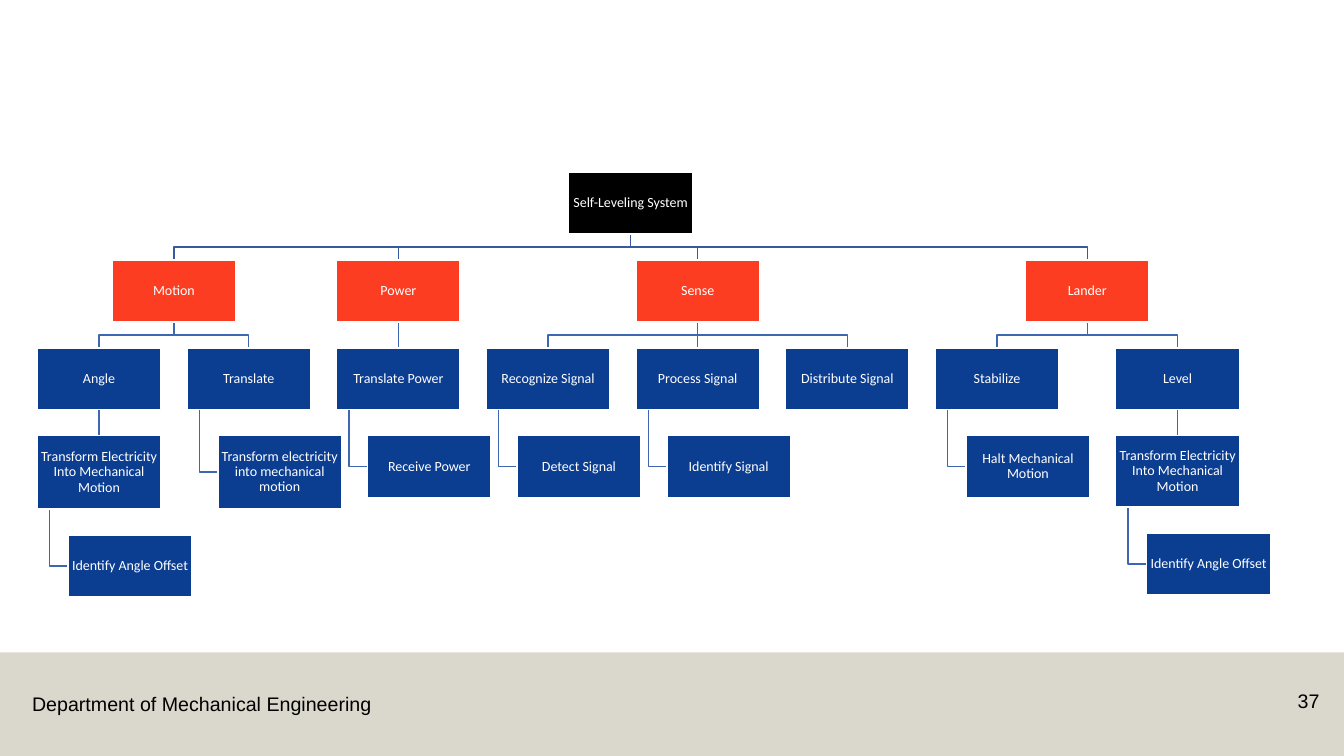
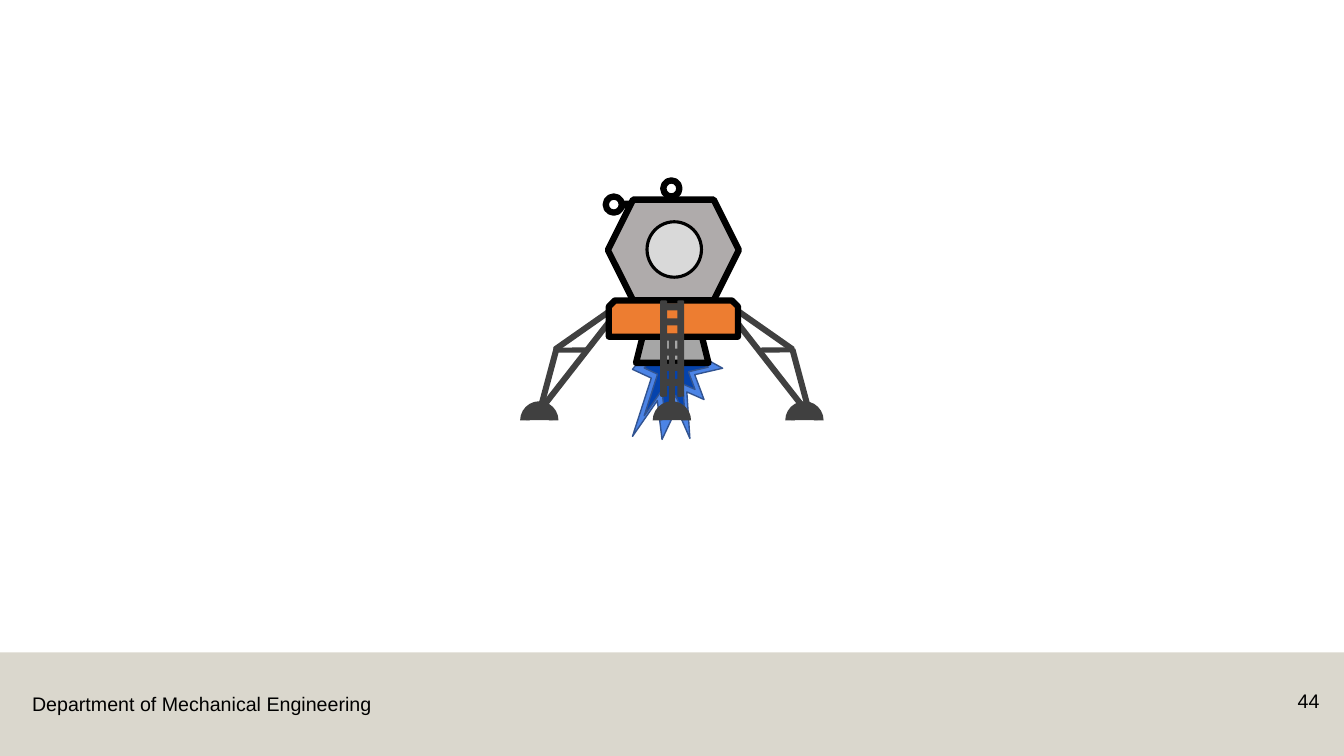
from lxml.etree import SubElement
from pptx import Presentation
from pptx.dml.color import RGBColor
from pptx.enum.shapes import MSO_CONNECTOR, MSO_SHAPE as Preset
from pptx.enum.text import MSO_ANCHOR, PP_ALIGN as Align
from pptx.oxml.ns import qn
from pptx.util import Pt

FOOTER = "Department of Mechanical Engineering"
BLACK, WHITE, RED, BLUE = "000000", "FFFFFF", "FC3D21", "0B3D91"
ROOT_LINE, BRANCH_LINE = "365B9D", "3E67B2"
DARK, ORANGE, HULL = "404040", "ED7D31", "AFABAB"

BOX_WIDTH, BOX_HEIGHT, GAP = 88.3, 44.15, 18.55
CHART_LEFT, CHART_TOP = 26.6, 123.1
COLUMN_PITCH, INDENT, STEM = 106.9, 22.1, 8.8

ROOT = "Self-Leveling System"
BELOW, HANGING = 0, INDENT
TRANSFORM = "Transform Electricity Into Mechanical Motion"
OFFSET = ("Identify Angle Offset", HANGING, BOX_HEIGHT)
BRANCHES = [
    ("Motion", [
        ("Angle", 0, [(TRANSFORM, BELOW, 52.5), OFFSET]),
        ("Translate", 1, [("Transform electricity into mechanical motion", HANGING, 52)]),
    ]),
    ("Power", [
        ("Translate Power", 2, [("Receive Power", HANGING, BOX_HEIGHT)]),
    ]),
    ("Sense", [
        ("Recognize Signal", 3, [("Detect Signal", HANGING, BOX_HEIGHT)]),
        ("Process Signal", 4, [("Identify Signal", HANGING, BOX_HEIGHT)]),
        ("Distribute Signal", 5, []),
    ]),
    ("Lander", [
        ("Stabilize", 6, [("Halt Mechanical Motion", HANGING, BOX_HEIGHT)]),
        ("Level", 7 + INDENT / COLUMN_PITCH, [(TRANSFORM, BELOW, 51), OFFSET]),
    ]),
]

FLAMES = [
    (Preset.EXPLOSION1, (415.4, 213.1, 129.6, 72), "4C84E6", "325491", 1, 270),
    (Preset.EXPLOSION1, (434.2, 226.8, 92.2, 51.1), "0543AD", "325491", 1, 270),
]
NOZZLE = [(Preset.TRAPEZOID, (454.3, 229, 51.8, 30.2), "A6A6A6", BLACK, 4.5, 0)]
FEET_LEFT, FOOT_PITCH = 371.5, 94.7
CABIN = [
    (Preset.ROUNDED_RECTANGLE, (439.2, 143.3, 16.6, 5.8), BLACK, None, 0, 0),
    (Preset.HEXAGON, (434.2, 142.6, 93.6, 72), HULL, BLACK, 4.5, 0),
]
LEG_STRUTS = [
    (370.8, 501.8, 253.4, 88.6, 4.3, 128),
    (391, 514.1, 231.1, 57.6, 4.3, 145),
    (369.4, 549.4, 268.6, 44.6, 4.3, 105),
    (395.3, 543.6, 248.2, 23.8, 3.6, 180),
]
CENTRE_STRUT = (453.6, 265, 52.6, 4.3)
BODY = [(Preset.SNIP_2_SAME_RECTANGLE, (434.9, 214.6, 92.2, 25.9), ORANGE, BLACK, 4.5, 0)]
RAILS = [471.6, 483.8]
RUNG_TOP, RUNG_PITCH, RUNG_COUNT = 216.7, 10.8, 6
FITTINGS = [
    (Preset.FLOWCHART_CONNECTOR, (462.2, 158.4, 38.9, 39.6), "D9D9D9", BLACK, 2.25, 0),
    (Preset.ROUNDED_RECTANGLE, (475.9, 136.8, 7.9, 5.8), BLACK, None, 0, 90),
    (Preset.FLOWCHART_CONNECTOR, (432.7, 140.4, 11.5, 11.5), WHITE, BLACK, 4.5, 0),
    (Preset.FLOWCHART_CONNECTOR, (473.8, 128.9, 11.5, 11.5), WHITE, BLACK, 4.5, 0),
]


def color(value):
    return RGBColor.from_string(value)


def add_part(shapes, preset, frame, fill, line=None, weight=0, angle=0):
    shape = shapes.add_shape(preset, *map(Pt, frame))
    shape.shadow.inherit = False
    shape.rotation = angle
    shape.fill.solid()
    shape.fill.fore_color.rgb = color(fill)
    if line:
        shape.line.color.rgb = color(line)
        shape.line.width = Pt(weight)
    else:
        shape.line.fill.background()
    return shape


def write(shape, text, size, font, ink, align):
    paragraph = shape.text_frame.paragraphs[0]
    paragraph.alignment = align
    run = paragraph.add_run()
    run.text = text
    run.font.size = Pt(size)
    run.font.name = font
    run.font.color.rgb = color(ink)
    return paragraph


def add_label(slide, frame, text, align, wrap):
    label = slide.shapes.add_textbox(*map(Pt, frame))
    label.text_frame.word_wrap = wrap
    write(label, text, 14, "Arial", BLACK, align)


def new_slide(presentation, number):
    slide = presentation.slides.add_slide(presentation.slide_layouts[6])
    band = add_part(slide.shapes, Preset.RECTANGLE, (0, 466, 960, 74), "B7B09C")
    band_color = band.fill._xPr.find(qn("a:solidFill"))[0]
    SubElement(band_color, qn("a:alpha")).set("val", "50000")
    add_label(slide, (15.8, 491, 258.5, 24.5), FOOTER, Align.LEFT, False)
    add_label(slide, (894.2, 488.9, 55.4, 28.8), number, Align.RIGHT, True)
    return slide


def add_link(slide, points, ink):
    points = [(Pt(x), Pt(y)) for x, y in points]
    if len(points) == 2:
        link = slide.shapes.add_connector(MSO_CONNECTOR.STRAIGHT, *points[0], *points[1])
        SubElement(link._element.spPr, qn("a:effectLst"))
    else:
        builder = slide.shapes.build_freeform(*points[0])
        builder.add_line_segments(points[1:], close=False)
        link = builder.convert_to_shape()
        link.shadow.inherit = False
        link.fill.background()
    link.line.color.rgb = color(ink)
    link.line.width = Pt(1)


def add_box(slide, text, fill, left, top, height):
    box = add_part(slide.shapes, Preset.RECTANGLE, (left, top, BOX_WIDTH, height), fill, WHITE, 1)
    frame = box.text_frame
    frame.word_wrap = True
    frame.vertical_anchor = MSO_ANCHOR.MIDDLE
    frame.margin_left = frame.margin_right = Pt(0.7)
    frame.margin_top = frame.margin_bottom = Pt(0.7)
    write(box, text, 10, "Calibri", WHITE, Align.CENTER).line_spacing = 0.9


def fork(parent_left, child_left, child_top):
    start, end = parent_left + BOX_WIDTH / 2, child_left + BOX_WIDTH / 2
    top, middle = child_top - GAP, child_top - GAP / 2
    if abs(start - end) < 1:
        return [(start, top), (start, child_top)]
    return [(start, top), (start, middle), (end, middle), (end, child_top)]


def hang(parent_left, child_top, child_height):
    stem, middle = parent_left + STEM, child_top + child_height / 2
    return [(stem, child_top - GAP), (stem, middle), (parent_left + INDENT, middle)]


def layout_tree():
    boxes, links = [], []
    branch_top = CHART_TOP + BOX_HEIGHT + GAP
    leaf_top = branch_top + BOX_HEIGHT + GAP
    branch_lefts = []
    for branch, leaves in BRANCHES:
        leaf_lefts = [CHART_LEFT + column * COLUMN_PITCH for _, column, _ in leaves]
        branch_left = (leaf_lefts[0] + leaf_lefts[-1]) / 2
        branch_lefts.append(branch_left)
        boxes.append((branch, RED, branch_left, branch_top, BOX_HEIGHT))
        for (leaf, _, chain), left in zip(leaves, leaf_lefts):
            links.append((fork(branch_left, left, leaf_top), BRANCH_LINE))
            boxes.append((leaf, BLUE, left, leaf_top, BOX_HEIGHT))
            top = leaf_top + BOX_HEIGHT + GAP
            for text, indent, height in chain:
                route = hang(left, top, height) if indent else fork(left, left, top)
                links.append((route, BRANCH_LINE))
                left += indent
                boxes.append((text, BLUE, left, top, height))
                top += height + GAP
    root_left = (branch_lefts[0] + branch_lefts[-1]) / 2
    boxes.append((ROOT, BLACK, root_left, CHART_TOP, BOX_HEIGHT))
    links += [(fork(root_left, left, branch_top), ROOT_LINE) for left in branch_lefts]
    return boxes, links


def build_tree(presentation):
    slide = new_slide(presentation, "37")
    boxes, links = layout_tree()
    for points, ink in links:
        add_link(slide, points, ink)
    for box in boxes:
        add_box(slide, *box)


def bar(frame, angle=0):
    return (Preset.ROUNDED_RECTANGLE, frame, DARK, None, 0, angle)


def lander_parts():
    feet = []
    for index in range(3):
        left = FEET_LEFT + index * FOOT_PITCH
        feet.append((Preset.BLOCK_ARC, (left, 286.6, 27.4, 27.4), DARK, None, 0, 0))
        feet.append(bar((left + 3.6, 293, 20.2, 7.2)))
    struts = [bar(CENTRE_STRUT, 90)]
    for left, right, top, width, height, angle in LEG_STRUTS:
        struts.append(bar((left, top, width, height), angle))
        struts.append(bar((right, top, width, height), 180 - angle))
    ladder = [bar((left, 214.6, 5, 68.8)) for left in RAILS]
    ladder += [bar((474.5, RUNG_TOP + index * RUNG_PITCH, 11.5, 5)) for index in range(RUNG_COUNT)]
    return FLAMES + NOZZLE + feet + CABIN + struts + BODY + ladder + FITTINGS


def build_lander(presentation):
    slide = new_slide(presentation, "44")
    lander = slide.shapes.add_group_shape()
    for part in lander_parts():
        add_part(lander.shapes, *part)


def main():
    presentation = Presentation()
    presentation.slide_width, presentation.slide_height = Pt(960), Pt(540)
    build_tree(presentation)
    build_lander(presentation)
    presentation.save("out.pptx")


if __name__ == "__main__":
    main()
